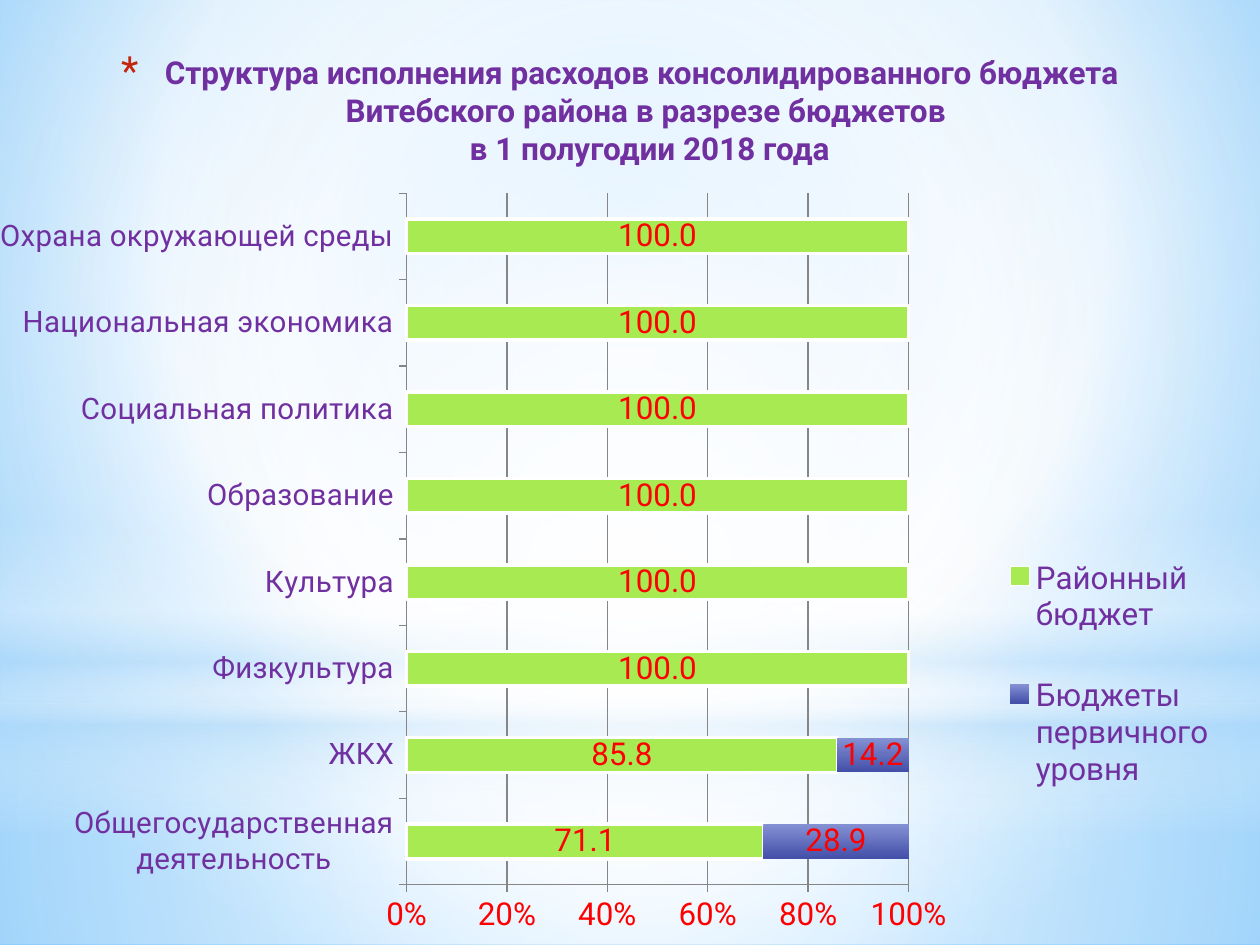
from pptx import Presentation
from pptx.chart.data import CategoryChartData
from pptx.dml.color import RGBColor
from pptx.enum.chart import XL_CHART_TYPE, XL_LEGEND_POSITION, XL_TICK_MARK
from pptx.enum.shapes import MSO_SHAPE
from pptx.enum.text import MSO_ANCHOR, PP_ALIGN
from pptx.oxml import parse_xml
from pptx.oxml.ns import nsdecls
from pptx.util import Pt

RECTANGLE, ELLIPSE = MSO_SHAPE.RECTANGLE, MSO_SHAPE.OVAL
STACKED_BAR = XL_CHART_TYPE.BAR_STACKED_100
LEGEND_RIGHT = XL_LEGEND_POSITION.RIGHT
TICK_OUTSIDE = XL_TICK_MARK.OUTSIDE
CENTER, MIDDLE = PP_ALIGN.CENTER, MSO_ANCHOR.MIDDLE

FONT = "Roboto"
COLORS = {
    "white": "FFFFFF", "haze": "B4DCFA", "sky": "9ED5FF", "deep sky": "5BB9FF",
    "purple": "7030A0", "red": "FF0000", "bullet": "C3260C", "axis": "868686",
    "green": "A7EA52", "blue top": "8491D4", "blue bottom": "434FA8",
}

TITLE = ("Структура исполнения расходов консолидированного бюджета \v"
         "Витебского района в разрезе бюджетов\v в 1 полугодии 2018 года")
CATEGORIES = [
    "Общегосударственная деятельность", "ЖКХ", "Физкультура", "Культура",
    "Образование", "Социальная политика", "Национальная экономика",
    "Охрана окружающей среды",
]
SERIES = {
    "Районный бюджет": [71.1, 85.8] + [100] * 6,
    "Бюджеты первичного уровня": [28.9, 14.2] + [None] * 6,
}

# Gradients: stops of (position, colour, opacity), all in percent
CENTRED = (50, 50, 50, 50)
BACKGROUND_STOPS = [(0, "sky", 100), (60, "white", 100), (100, "deep sky", 100)]
LAYERS = [
    (RECTANGLE, (0, 402, 720, 138), CENTRED,
     [(0, "white", 91), (37, "white", 76), (100, "haze", 79)]),
    (RECTANGLE, (0, 0, 720, 402), CENTRED,
     [(0, "white", 89), (48, "white", 62), (100, "haze", 79)]),
    (RECTANGLE, (0, 297, 720, 180), None,
     [(0, "white", 0), (29, "white", 30), (45, "haze", 40),
      (55, "white", 26), (65, "haze", 60), (100, "white", 0)]),
    (ELLIPSE, (0, 126, 720, 402), CENTRED,
     [(0, "white", 100), (56, "white", 0)]),
]


def color(name):
    return RGBColor.from_string(COLORS[name])


def points(box):
    return [Pt(length) for length in box]


def format_font(font, color_name, **values):
    for name, value in {"name": FONT, **values}.items():
        setattr(font, name, value)
    font.color.rgb = color(color_name)


def set_gradient(fill, element, stops, focus):
    """Fill with a radial gradient around focus, or a vertical one without it."""
    fill.background()
    stop_xml = "".join(
        f'<a:gs pos="{position * 1000}"><a:srgbClr val="{COLORS[name]}">'
        f'<a:alpha val="{opacity * 1000}"/></a:srgbClr></a:gs>'
        for position, name, opacity in stops)
    if focus:
        sides = " ".join(f'{side}="{value * 1000}"' for side, value in zip("ltrb", focus))
        direction = f'<a:path path="circle"><a:fillToRect {sides}/></a:path>'
    else:
        direction = '<a:lin ang="5400000" scaled="0"/>'
    gradient = parse_xml(f'<a:gradFill {nsdecls("a")} rotWithShape="1">'
                         f'<a:gsLst>{stop_xml}</a:gsLst>{direction}</a:gradFill>')
    empty_fill = element.xpath(".//a:noFill")[0]
    empty_fill.getparent().replace(empty_fill, gradient)


def add_layer(slide, kind, box, focus, stops):
    shape = slide.shapes.add_shape(kind, *points(box))
    shape.shadow.inherit = False
    set_gradient(shape.fill, shape._element, stops, focus)
    shape.line.fill.background()


def add_title(slide):
    frame = slide.shapes.add_textbox(*points((25, 26, 663, 73.5))).text_frame
    frame.word_wrap = True
    frame.vertical_anchor = MIDDLE
    paragraph = frame.paragraphs[0]
    paragraph.text = TITLE
    paragraph.alignment = CENTER
    for run in paragraph.runs:
        format_font(run.font, "purple", size=Pt(18), bold=True)
    # Hanging star bullet
    properties = paragraph._p.get_or_add_pPr()
    properties.set("marL", str(Pt(25)))
    properties.set("indent", str(-Pt(25)))
    for bullet in (f'<a:buClr {nsdecls("a")}><a:srgbClr val="{COLORS["bullet"]}"/></a:buClr>',
                   f'<a:buSzPct {nsdecls("a")} val="128000"/>',
                   f'<a:buFont {nsdecls("a")} typeface="{FONT}"/>',
                   f'<a:buChar {nsdecls("a")} char="*"/>'):
        properties.append(parse_xml(bullet))


def set_layout(element, after, box, inner=False):
    """Place a chart part by fractions of the chart area."""
    for old in element.xpath("./c:layout"):
        element.remove(old)
    target = '<c:layoutTarget val="inner"/>' if inner else ""
    modes = '<c:xMode val="edge"/><c:yMode val="edge"/>'
    sizes = "".join(f'<c:{name} val="{value}"/>' for name, value in zip("xywh", box))
    layout = parse_xml(f'<c:layout {nsdecls("c")}><c:manualLayout>{target}{modes}{sizes}'
                       '</c:manualLayout></c:layout>')
    if after:
        element.xpath(f"./c:{after}")[-1].addnext(layout)
    else:
        element.insert(0, layout)


def format_axis(axis, color_name, size):
    format_font(axis.tick_labels.font, color_name, size=size)
    axis.major_tick_mark = TICK_OUTSIDE
    axis.format.line.color.rgb = color("axis")


def add_budget_chart(slide):
    data = CategoryChartData(number_format="0.0")
    data.categories = CATEGORIES
    for name, values in SERIES.items():
        data.add_series(name, values)
    chart = slide.shapes.add_chart(STACKED_BAR, *points((0, 110, 720, 430)), data).chart
    chart.has_title = False
    format_font(chart.font, "red", size=Pt(18))

    # Axes
    format_axis(chart.category_axis, "purple", Pt(16.9))
    value_axis = chart.value_axis
    format_axis(value_axis, "red", Pt(18))
    value_axis.has_major_gridlines = True
    value_axis.major_gridlines.format.line.color.rgb = color("axis")
    value_axis.tick_labels.number_format = "0%"
    value_axis.tick_labels.number_format_is_linked = False

    # Bars and their labels
    plot = chart.plots[0]
    for name, value in {"gap_width": 150, "overlap": 100, "vary_by_categories": False}.items():
        setattr(plot, name, value)
    for series in plot.series:
        labels = series.data_labels
        for name, value in {"show_value": True, "number_format": "0.0",
                            "number_format_is_linked": False}.items():
            setattr(labels, name, value)
        format_font(labels.font, "red", size=Pt(18))
    district, primary = plot.series
    district.format.fill.solid()
    district.format.fill.fore_color.rgb = color("green")
    district.format.line.color.rgb = color("white")
    district.format.line.width = Pt(2)
    primary.format.fill.gradient()
    primary.format.fill.gradient_angle = 270
    for stop, name in zip(primary.format.fill.gradient_stops, ("blue top", "blue bottom")):
        stop.color.rgb = color(name)

    # Legend and plot area
    chart.has_legend = True
    legend = chart.legend
    legend.position = LEGEND_RIGHT
    legend.include_in_layout = False
    format_font(legend.font, "purple", size=Pt(18))
    set_layout(legend._element, "legendPos", (0.78, 0.43, 0.2, 0.42))
    plot_area = chart._chartSpace.chart.plotArea
    set_layout(plot_area, None, (0.32, 0, 0.4, 0.92), inner=True)


def main():
    presentation = Presentation()
    presentation.slide_width, presentation.slide_height = Pt(720), Pt(540)
    slide = presentation.slides.add_slide(presentation.slide_layouts[6])
    set_gradient(slide.background.fill, slide._element, BACKGROUND_STOPS, (20, 10, 20, 60))
    for kind, box, focus, stops in LAYERS:
        add_layer(slide, kind, box, focus, stops)
    add_title(slide)
    add_budget_chart(slide)
    presentation.save("out.pptx")


if __name__ == "__main__":
    main()
